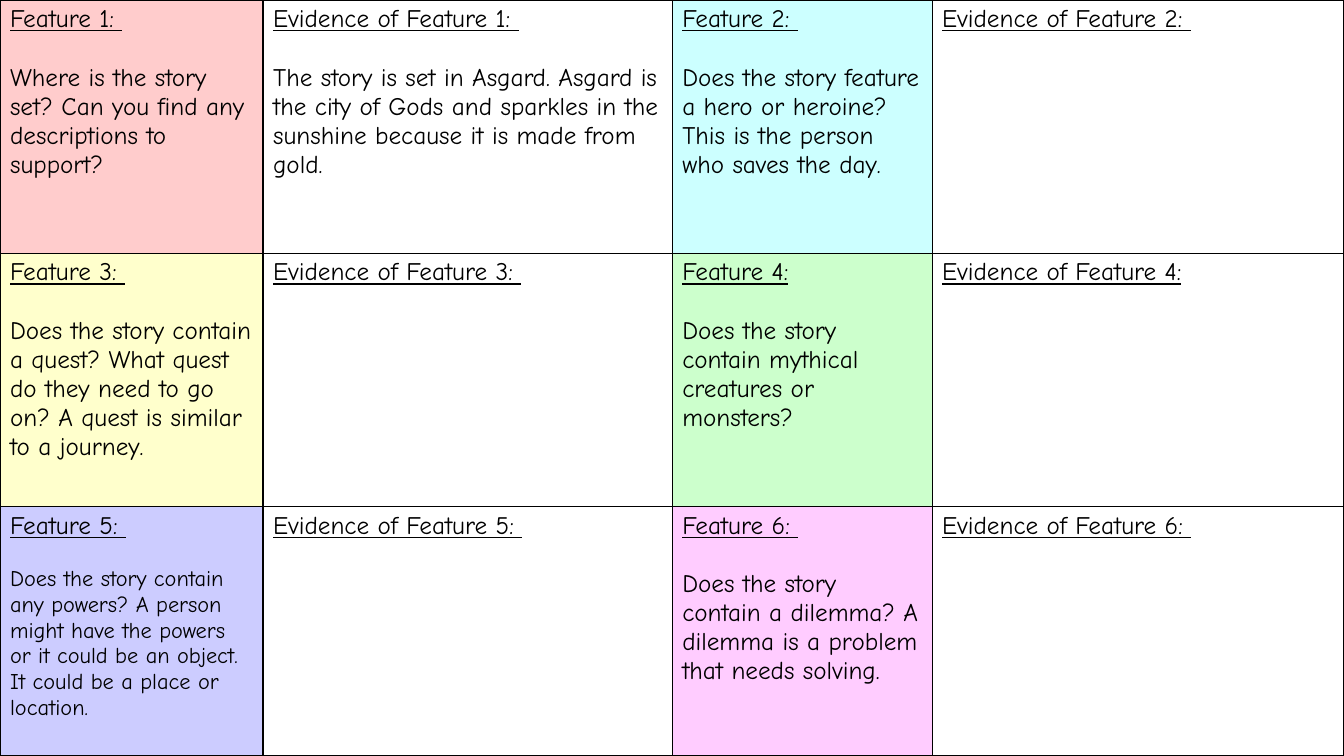
from lxml import etree
from pptx import Presentation
from pptx.dml.color import RGBColor
from pptx.oxml.ns import qn
from pptx.util import Cm, Pt

FONT = "Comic Neue"
BLACK = RGBColor(0, 0, 0)
PINK = RGBColor(0xFF, 0xCC, 0xCC)
CYAN = RGBColor(0xCC, 0xFF, 0xFF)
CREAM = RGBColor(0xFF, 0xFF, 0xCC)
GREEN = RGBColor(0xCC, 0xFF, 0xCC)
BLUE = RGBColor(0xCC, 0xCC, 0xFF)
MAUVE = RGBColor(0xFF, 0xCC, 0xFF)

# Content: underlined tail of the heading, question, evidence, fill, body size
FEATURES = [
    (": ", "Where is the story set? Can you find any descriptions to support?",
     "The story is set in Asgard. Asgard is the city of Gods and sparkles "
     "in the sunshine because it is made from gold.", PINK, 18),
    (": ", "Does the story feature a hero or heroine? This is the person "
     "who saves the day.", "", CYAN, 18),
    (": ", "Does the story contain a quest? What quest do they need to go on? "
     "A quest is similar to a journey.", "", CREAM, 18),
    (":", "Does the story contain mythical creatures or monsters?",
     "", GREEN, 18),
    (": ", "Does the story contain any powers? A person might have the powers "
     "or it could be an object. It could be a place or location.",
     "", BLUE, 16),
    (": ", "Does the story contain a dilemma? A dilemma is a problem that "
     "needs solving.", "", MAUVE, 18),
]
COLS = [6.63, 10.31, 6.55, 10.38]
ROWS = [6.38, 6.38, 6.29]
LINE = 1.16  # line height of the font, in ems


def style(para, text, size, under):
    para.text = text
    font = para.font
    font.name, font.size, font.underline = FONT, Pt(size), under
    font.color.rgb = BLACK


def border(cell):
    props = cell._tc.get_or_add_tcPr()
    for side in ("lnL", "lnR", "lnT", "lnB"):
        line = etree.SubElement(props, qn("a:" + side), w=str(Pt(1)))
        fill = etree.SubElement(line, qn("a:solidFill"))
        etree.SubElement(fill, qn("a:srgbClr"), val=str(BLACK))


def write(cell, head, body, size, color):
    border(cell)
    if color is None:
        cell.fill.background()
    else:
        cell.fill.solid()
        cell.fill.fore_color.rgb = color
    frame = cell.text_frame
    style(frame.paragraphs[0], head, 18, True)
    if body:
        para = frame.add_paragraph()
        para.space_before = Pt(round(size * LINE, 1))
        style(para, body, size, False)


# Slide
deck = Presentation()
deck.slide_width, deck.slide_height = Cm(33.87), Cm(19.05)
slide = deck.slides.add_slide(deck.slide_layouts[6])

# Table filling the page
table = slide.shapes.add_table(len(ROWS), len(COLS), 0, 0,
                               Cm(sum(COLS)), Cm(sum(ROWS))).table
table.first_row = table.horz_banding = False
for col, width in zip(table.columns, COLS):
    col.width = Cm(width)
for row, height in zip(table.rows, ROWS):
    row.height = Cm(height)

# Two features a row, each beside its evidence
for i, (tail, ask, proof, color, size) in enumerate(FEATURES):
    row, pair = divmod(i, 2)
    name = f"Feature {i + 1}{tail}"
    write(table.cell(row, 2 * pair), name, ask, size, color)
    write(table.cell(row, 2 * pair + 1), "Evidence of " + name, proof, 18, None)

deck.save("out.pptx")
